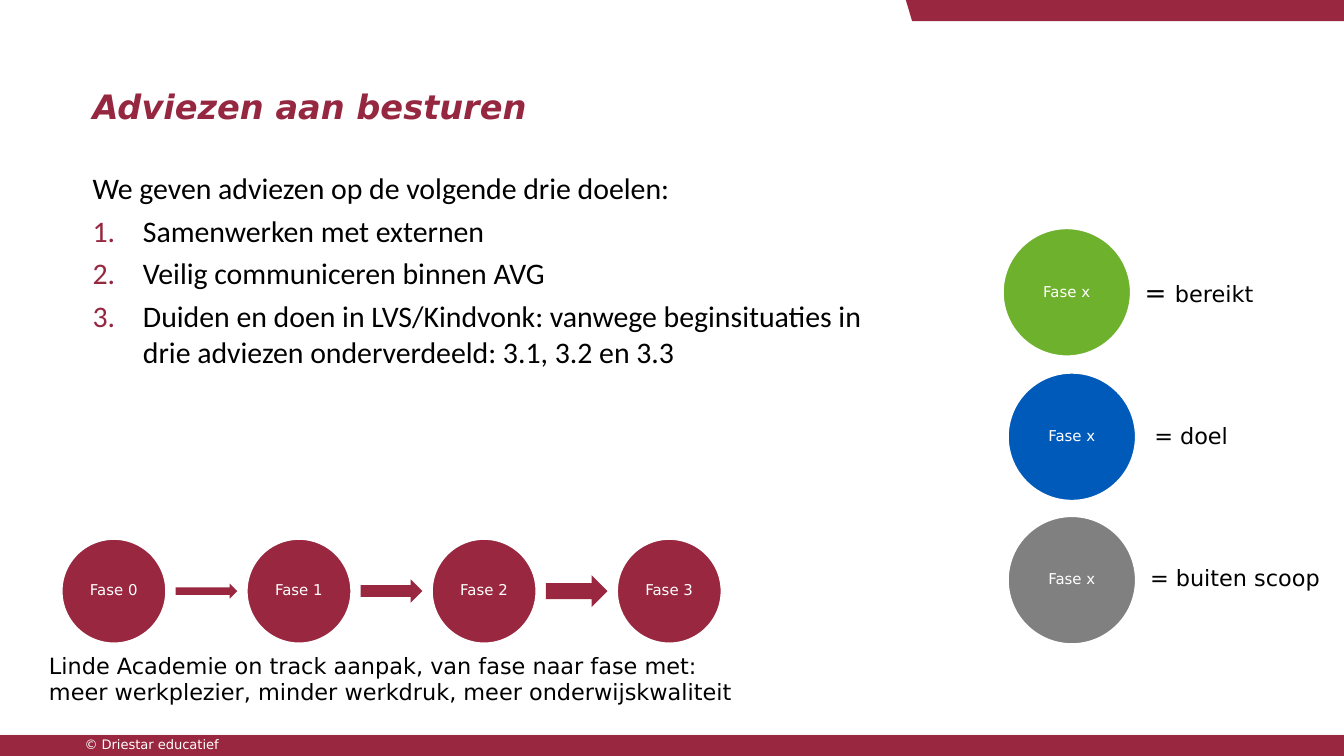
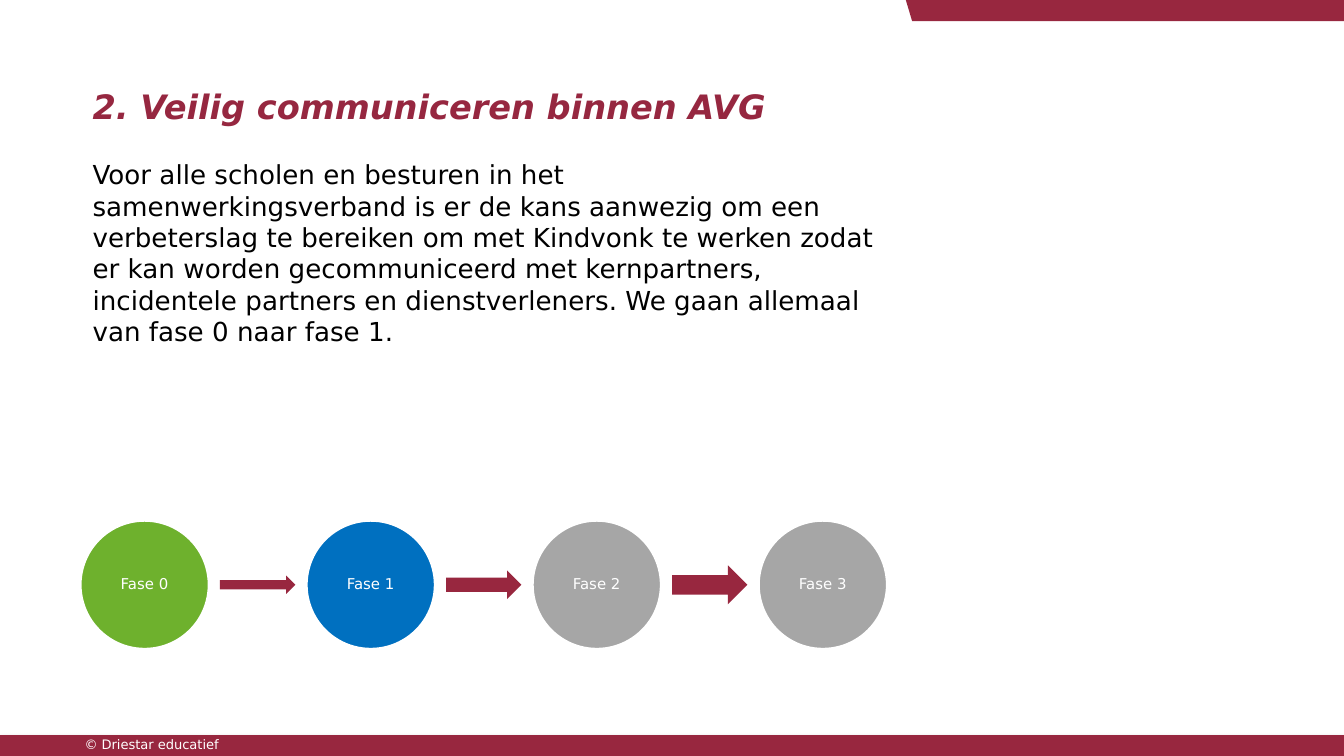
from lxml import etree
from pptx import Presentation
from pptx import util as u
from pptx.dml.color import RGBColor
from pptx.enum import shapes, text
from pptx.oxml import ns

Pt = u.Pt


class Theme:
    """Colours, type styles and proportions shared by the slides."""
    BAND = "98273F"
    HEADING = "962740"
    WHITE = "FFFFFF"
    BLACK = "000000"
    GREEN = "6EB12D"
    BLUE = "005ABA"
    BRIGHT_BLUE = "0070C0"
    GREY = "808080"
    LIGHT_GREY = "A6A6A6"

    STYLES = {
        "title": dict(name="DejaVu Sans", size=Pt(18), bold=True, italic=True, color=HEADING),
        "list": dict(name="Calibri", size=Pt(16), color=BLACK),
        "body": dict(name="DejaVu Sans", size=Pt(14), color=BLACK),
        "label": dict(name="DejaVu Sans", size=Pt(12), color=BLACK),
        "phase": dict(name="DejaVu Sans", size=Pt(8), color=WHITE),
        "footer": dict(name="DejaVu Sans", size=Pt(7), color=WHITE),
    }

    # Phase row, as shares of the circle diameter
    PITCH = 1.74
    ARROW_START = 1.08
    ARROW_LENGTH = 0.58
    ARROW_HEIGHTS = (0.14, 0.22, 0.3)

    LEGEND_DIAMETER = 69.6
    LIST_INDENT = 27
    LIST_GAP = 3.8


def set_values(target, values):
    for name, value in values.items():
        setattr(target, name, value)


class Deck:
    def __init__(self, theme):
        self.theme = theme
        self.presentation = Presentation()
        set_values(self.presentation, dict(slide_width=Pt(720), slide_height=Pt(405)))
        self.slide = None

    # Slide frame: bands, footer and title
    def add_slide(self, title):
        self.slide = self.presentation.slides.add_slide(self.presentation.slide_layouts[6])
        footer_band = self.add_shape(shapes.MSO_SHAPE.RECTANGLE, 0, 393.8, 720, 11.2,
                                     self.theme.BAND)
        self.add_shadow(footer_band)

        builder = self.slide.shapes.build_freeform(Pt(485.3), 0)
        builder.add_line_segments(
            [(Pt(720), 0), (Pt(720), Pt(11.3)), (Pt(488.7), Pt(11.3))], close=True)
        self.paint(builder.convert_to_shape(), self.theme.BAND)

        self.add_text(38.2, 391, 147, 16, ["© Driestar educatief"], "footer")
        self.add_text(42.5, 42.5, 434, 29, [title], "title")

    def paint(self, shape, color, outline=None):
        shape.shadow.inherit = False
        shape.fill.solid()
        shape.fill.fore_color.rgb = RGBColor.from_string(color)
        if outline:
            shape.line.color.rgb = RGBColor.from_string(outline)
            shape.line.width = Pt(2)
        else:
            shape.line.fill.background()

    def add_shape(self, kind, left, top, width, height, color, outline=None):
        shape = self.slide.shapes.add_shape(kind, Pt(left), Pt(top), Pt(width), Pt(height))
        self.paint(shape, color, outline)
        return shape

    def add_shadow(self, shape):
        effects = shape._element.spPr.find(ns.qn("a:effectLst"))
        shadow = etree.SubElement(effects, ns.qn("a:outerShdw"), blurRad=str(Pt(3.1)),
                                  dist=str(Pt(1.8)), dir="5400000", rotWithShape="0")
        color = etree.SubElement(shadow, ns.qn("a:srgbClr"), val=self.theme.BLACK)
        etree.SubElement(color, ns.qn("a:alpha"), val="35000")

    # Text
    def add_run(self, paragraph, content, style):
        values = dict(self.theme.STYLES[style])
        color = values.pop("color")
        run = paragraph.add_run()
        run.text = content
        set_values(run.font, values)
        run.font.color.rgb = RGBColor.from_string(color)

    def add_text(self, left, top, width, height, lines, style, **frame_values):
        """Each line is a string, or a list of (string, style) runs."""
        box = self.slide.shapes.add_textbox(Pt(left), Pt(top), Pt(width), Pt(height))
        values = dict(word_wrap=True, auto_size=text.MSO_AUTO_SIZE.SHAPE_TO_FIT_TEXT)
        set_values(box.text_frame, values | frame_values)
        for index, line in enumerate(lines):
            paragraph = (box.text_frame.add_paragraph() if index
                         else box.text_frame.paragraphs[0])
            for content, run_style in [(line, style)] if isinstance(line, str) else line:
                self.add_run(paragraph, content, run_style)
        return box

    def add_numbered_list(self, left, top, width, height, intro, items):
        box = self.add_text(left, top, width, height, [intro, *items], "list",
                            margin_top=0, auto_size=text.MSO_AUTO_SIZE.NONE)
        indent = Pt(self.theme.LIST_INDENT)
        for paragraph in box.text_frame.paragraphs[1:]:
            paragraph.space_before = Pt(self.theme.LIST_GAP)
            properties = paragraph._p.get_or_add_pPr()
            properties.set("marL", str(indent))
            properties.set("indent", str(-indent))
            color = etree.SubElement(properties, ns.qn("a:buClr"))
            etree.SubElement(color, ns.qn("a:srgbClr"), val=self.theme.HEADING)
            etree.SubElement(properties, ns.qn("a:buAutoNum"), type="arabicPeriod")

    # Phases
    def add_phase(self, left, top, diameter, label, color):
        circle = self.add_shape(shapes.MSO_SHAPE.OVAL, left, top, diameter, diameter,
                                color, self.theme.WHITE)
        margins = {f"margin_{side}": Pt(0.7) for side in ("left", "top", "right", "bottom")}
        set_values(circle.text_frame, dict(
            word_wrap=True, vertical_anchor=text.MSO_ANCHOR.MIDDLE, **margins))
        paragraph = circle.text_frame.paragraphs[0]
        set_values(paragraph, dict(alignment=text.PP_ALIGN.CENTER, line_spacing=0.9))
        self.add_run(paragraph, label, "phase")

    def add_phase_row(self, left, top, diameter, colors):
        theme = self.theme
        for index, color in enumerate(colors):
            phase_left = left + index * theme.PITCH * diameter
            self.add_phase(phase_left, top, diameter, f"Fase {index}", color)
            if index < len(theme.ARROW_HEIGHTS):
                height = theme.ARROW_HEIGHTS[index] * diameter
                self.add_shape(shapes.MSO_SHAPE.RIGHT_ARROW,
                               phase_left + theme.ARROW_START * diameter,
                               top + (diameter - height) / 2,
                               theme.ARROW_LENGTH * diameter, height, theme.BAND)

    def add_legend_entry(self, left, top, color, label_left, label_top, label_width, line):
        self.add_phase(left, top, self.theme.LEGEND_DIAMETER, "Fase x", color)
        self.add_text(label_left, label_top, label_width, 22, [line], "label")


def main():
    theme = Theme()
    deck = Deck(theme)

    # Slide 1: goals, phases and legend
    deck.add_slide("Adviezen aan besturen")
    deck.add_numbered_list(
        42.5, 90.7, 434, 271, "We geven adviezen op de volgende drie doelen:",
        ["Samenwerken met externen",
         "Veilig communiceren binnen AVG",
         "Duiden en doen in LVS/Kindvonk: vanwege beginsituaties in drie adviezen "
         "onderverdeeld: 3.1, 3.2 en 3.3"])
    deck.add_phase_row(32.5, 288.2, 57, [theme.BAND] * 4)
    legend = [
        (536.7, 121.8, theme.GREEN, 606.2, 144.7, 81.4, [("= ", "body"), ("bereikt", "label")]),
        (539.4, 199.2, theme.BLUE, 611.3, 222.5, 81.4, "= doel"),
        (539.4, 276, theme.GREY, 609, 298.8, 110, "= buiten scoop"),
    ]
    for entry in legend:
        deck.add_legend_entry(*entry)
    deck.add_text(19.2, 345.6, 410.4, 36,
                  ["Linde Academie on track aanpak, van fase naar fase met:",
                   "meer werkplezier, minder werkdruk, meer onderwijskwaliteit"], "label")

    # Slide 2: safe communication
    deck.add_slide("2. Veilig communiceren binnen AVG")
    deck.add_phase_row(42.7, 278.5, 69.6,
                       [theme.GREEN, theme.BRIGHT_BLUE, theme.LIGHT_GREY, theme.LIGHT_GREY])
    deck.add_text(42.5, 81.4, 433.4, 108.7, [
        "Voor alle scholen en besturen in het samenwerkingsverband is er de kans aanwezig om "
        "een verbeterslag te bereiken om met Kindvonk te werken zodat er kan worden "
        "gecommuniceerd met kernpartners, incidentele partners en dienstverleners. We gaan "
        "allemaal van fase 0 naar fase 1."], "body")

    deck.presentation.save("out.pptx")


if __name__ == "__main__":
    main()
